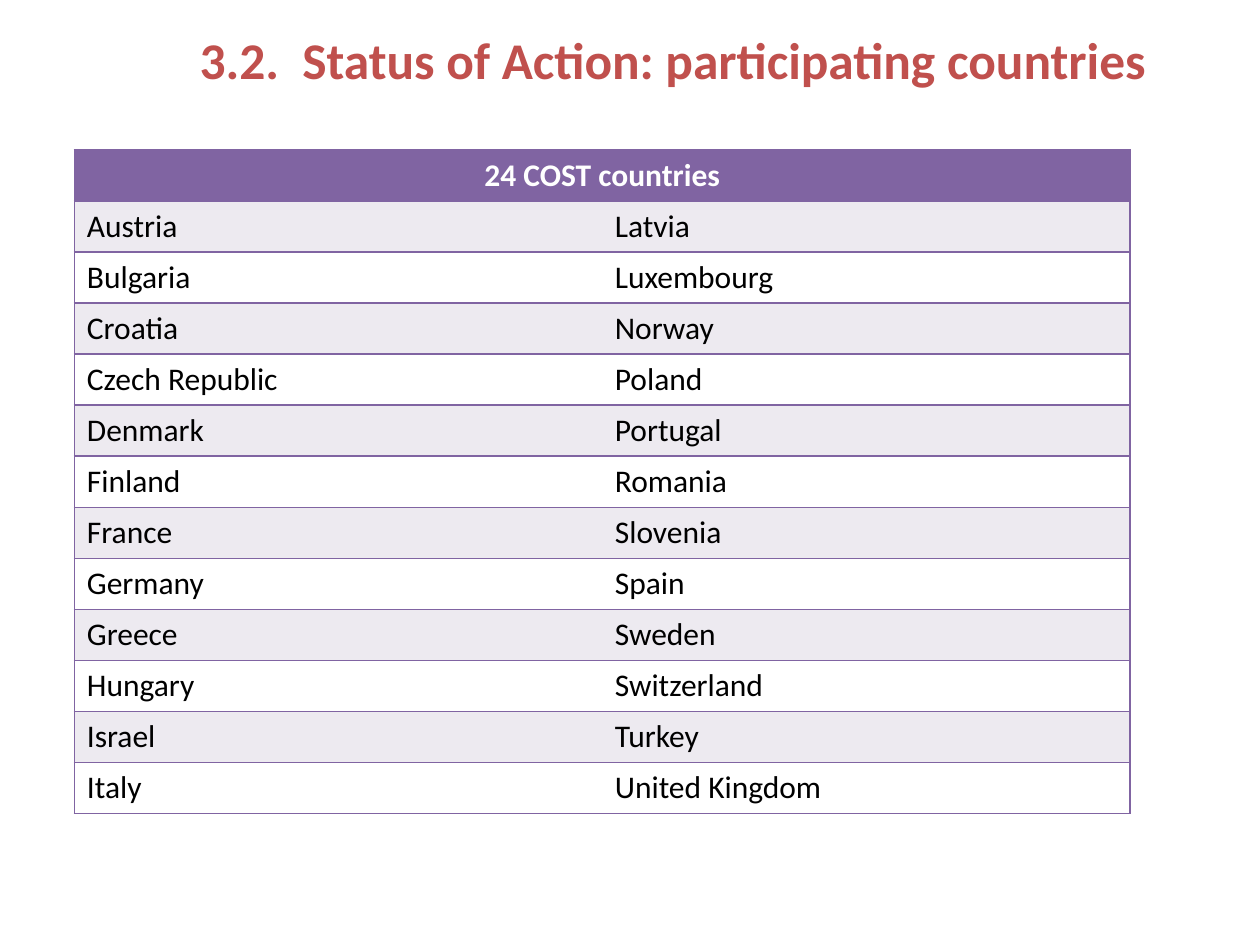
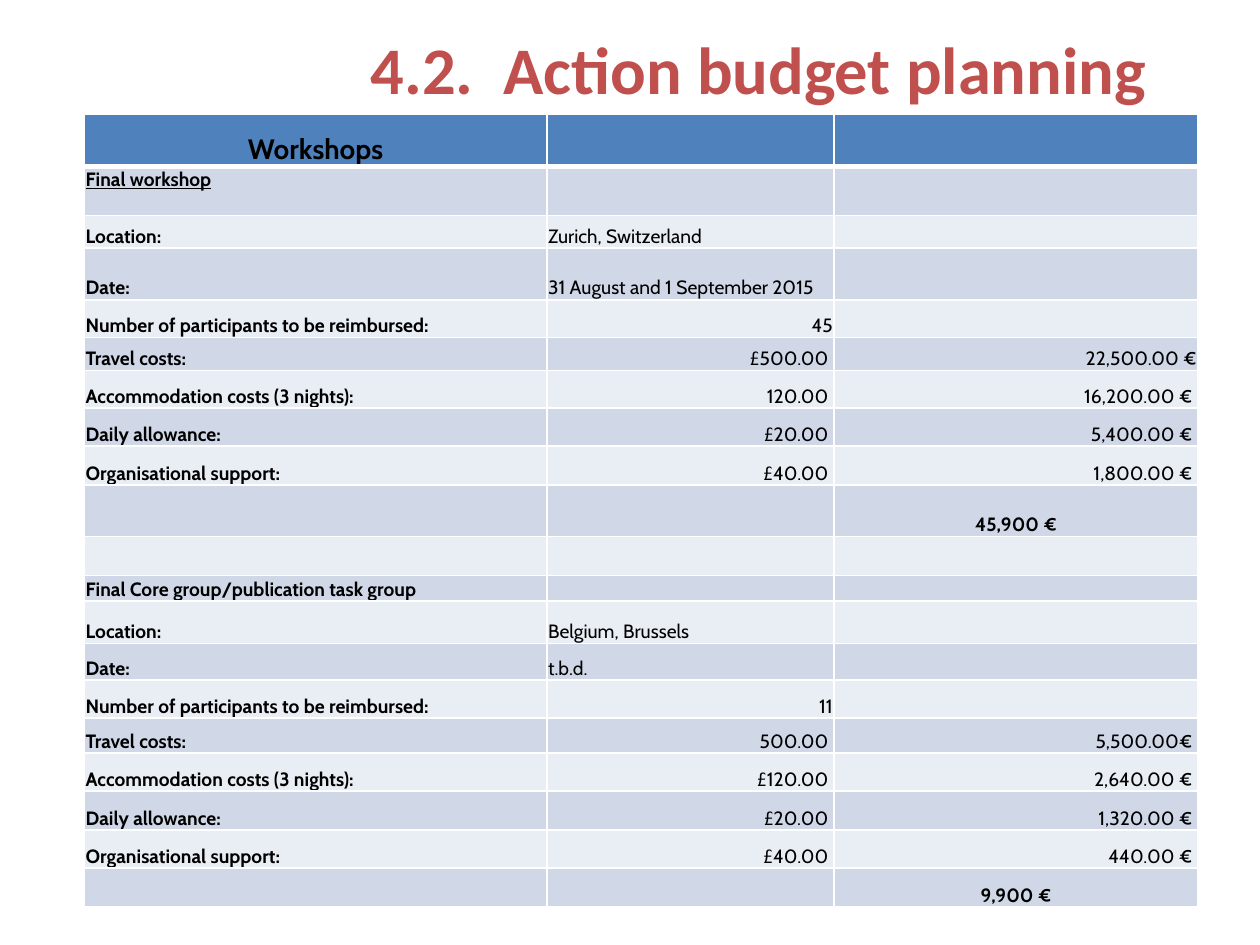
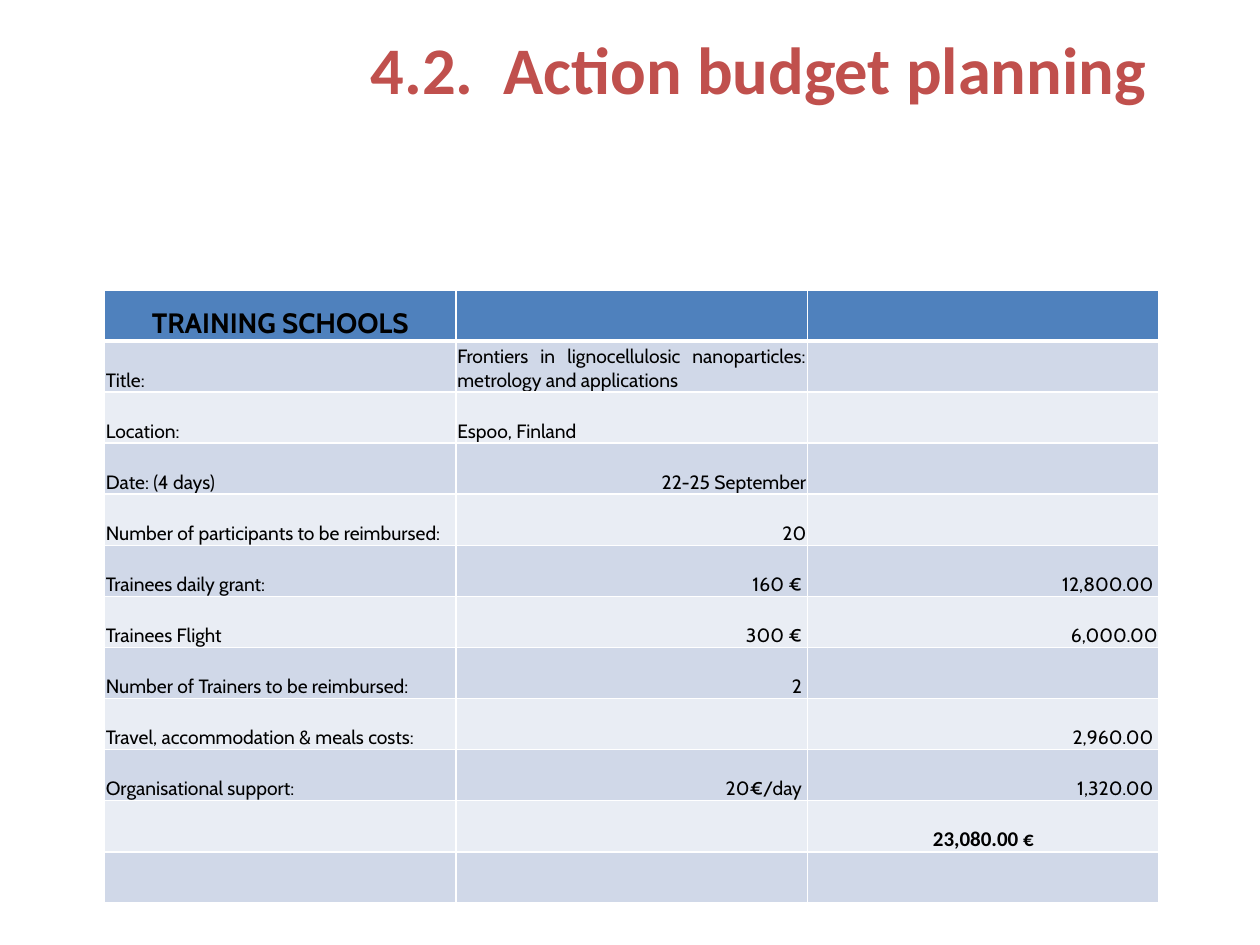
from lxml import etree
from pptx import Presentation
from pptx.dml.color import RGBColor
from pptx.enum import text
from pptx.oxml import ns
from pptx.util import Inches, Pt

# Content
COUNTRIES_TITLE = "3.2.  Status of Action: participating countries"
BUDGET_TITLE = "4.2.  Action budget planning"

COUNTRIES_HEADING = "24 COST countries"
COUNTRIES = [
    ("Austria", "Latvia"),
    ("Bulgaria", "Luxembourg"),
    ("Croatia", "Norway"),
    ("Czech Republic", "Poland"),
    ("Denmark", "Portugal"),
    ("Finland", "Romania"),
    ("France", "Slovenia"),
    ("Germany", "Spain"),
    ("Greece", "Sweden"),
    ("Hungary", "Switzerland"),
    ("Israel", "Turkey"),
    ("Italy", "United Kingdom"),
]

# Budget rows: kind, height, label, value, amount
WORKSHOPS = [
    ("heading", 0.41, "Workshops", "", ""),
    ("section", 0.39, "Final workshop", "", ""),
    ("words", 0.26, "Location:", "Zurich, Switzerland", ""),
    ("words", 0.41, "Date:", "31 August and 1 September 2015", ""),
    ("figures", 0.3, "Number of participants to be reimbursed:", "45", ""),
    ("figures", 0.26, "Travel costs:", "£500.00 ", "22,500.00 €"),
    ("figures", 0.3, "Accommodation costs (3 nights):", "120.00 ", "16,200.00 € "),
    ("figures", 0.3, "Daily allowance:", "£20.00 ", "5,400.00 € "),
    ("figures", 0.31, "Organisational support:", "£40.00 ", "1,800.00 € "),
    ("total", 0.41, "", "", "45,900 €"),
    ("words", 0.31, "", "", ""),
    ("words", 0.2, "Final Core group/publication task group", "", ""),
    ("words", 0.34, "Location:", "Belgium, Brussels", ""),
    ("words", 0.29, "Date:", "t.b.d.", ""),
    ("figures", 0.3, "Number of participants to be reimbursed:", "11", ""),
    ("figures", 0.28, "Travel costs:", "500.00 ", "5,500.00€ "),
    ("figures", 0.3, "Accommodation costs (3 nights):", "£120.00 ", "2,640.00 € "),
    ("figures", 0.31, "Daily allowance:", "£20.00 ", "1,320.00 € "),
    ("figures", 0.3, "Organisational support:", "£40.00 ", "440.00 € "),
    ("total", 0.31, "", "", "9,900 €"),
]

ROW_H = 4.87 / 12
SCHOOLS = [
    ("heading", ROW_H, "TRAINING SCHOOLS", "", ""),
    ("justified", ROW_H, "Title:",
     "Frontiers in lignocellulosic nanoparticles: metrology and applications", ""),
    ("words", ROW_H, "Location:", "Espoo, Finland", ""),
    ("figures", ROW_H, "Date: (4 days)", "22-25 September", ""),
    ("figures", ROW_H, "Number of participants to be reimbursed:", "20", ""),
    ("figures", ROW_H, "Trainees daily grant:", "160 € ", "12,800.00 "),
    ("figures", ROW_H, "Trainees Flight", "300 € ", "6,000.00"),
    ("figures", ROW_H, "Number of Trainers to be reimbursed:", "2 ", ""),
    ("figures", ROW_H, "Travel, accommodation & meals costs:", "", "2,960.00 "),
    ("figures", ROW_H, "Organisational support:", "20€/day ", "1,320.00 "),
    ("total", ROW_H, "", "", "23,080.00 €"),
    ("words", ROW_H, "", "", ""),
]

# Shared style
RED = RGBColor(0xC0, 0x50, 0x4D)
PURPLE = RGBColor(0x80, 0x64, 0xA2)
PALE_PURPLE = RGBColor(0xED, 0xEA, 0xF0)
BLUE = RGBColor(0x4F, 0x81, 0xBD)
MID_BLUE = RGBColor(0xD0, 0xD8, 0xE8)
PALE_BLUE = RGBColor(0xE9, 0xED, 0xF4)
WHITE = RGBColor(0xFF, 0xFF, 0xFF)
BLACK = RGBColor(0, 0, 0)
TITLE_FONT, BUDGET_FONT = "Calibri", "Cabin"
TITLE_RIGHT = 9.2
ALIGN = text.PP_ALIGN
VALUE_ALIGN = {"figures": ALIGN.RIGHT, "justified": ALIGN.JUSTIFY, "total": ALIGN.CENTER}


def write(paragraph, words, font, size, color, bold=False, align=ALIGN.LEFT):
    paragraph.alignment = align
    run = paragraph.add_run()
    run.text = words
    run.font.name, run.font.size, run.font.bold = font, Pt(size), bold
    run.font.color.rgb = color
    return run


def add_title(slide, words, size, width):
    title = slide.shapes.add_textbox(
        Inches(TITLE_RIGHT - width), Inches(0.17), Inches(width), Inches(0.74))
    title.text_frame.word_wrap = True
    write(title.text_frame.paragraphs[0], words, TITLE_FONT, size, RED, True, ALIGN.RIGHT)


def add_grid(slide, left, top, widths, heights):
    grid = slide.shapes.add_table(
        len(heights), len(widths), Inches(left), Inches(top),
        Inches(sum(widths)), Inches(sum(heights))).table
    grid.first_row = grid.horz_banding = False
    for column, width in zip(grid.columns, widths):
        column.width = Inches(width)
    for row, height in zip(grid.rows, heights):
        row.height = Inches(height)
    return grid


def paint(cell, fill, border, **line_widths):
    """Fill a cell and draw its sides (L, R, T, B); a width of 0 means no line."""
    cell.fill.solid()
    cell.fill.fore_color.rgb = fill
    properties = cell._tc.get_or_add_tcPr()
    for place, side in enumerate("LRTB"):
        width = line_widths.get(side, 1)
        line = etree.Element(ns.qn(f"a:ln{side}"), w=str(Pt(width)))
        if width:
            solid = etree.SubElement(line, ns.qn("a:solidFill"))
            etree.SubElement(solid, ns.qn("a:srgbClr"), val=str(border))
        else:
            etree.SubElement(line, ns.qn("a:noFill"))
        properties.insert(place, line)


def add_countries(slide):
    rows = [(COUNTRIES_HEADING, "")] + COUNTRIES
    grid = add_grid(slide, 0.59, 1.19, [4.19] * 2, [5.27 / len(rows)] * len(rows))
    grid.cell(0, 0).merge(grid.cell(0, 1))
    for r, row in enumerate(rows):
        fill = PURPLE if r == 0 else PALE_PURPLE if r % 2 else WHITE
        for c, country in enumerate(row):
            cell = grid.cell(r, c)
            inner = {} if r == 0 else {"L": 0} if c else {"R": 0}
            paint(cell, fill, PURPLE, **inner)
            if country:
                write(cell.text_frame.paragraphs[0], country, TITLE_FONT, 18,
                      BLACK if r else WHITE, r == 0, ALIGN.LEFT if r else ALIGN.CENTER)


def add_budget(slide, left, top, widths, rows, bold_labels, total_font, total_size):
    grid = add_grid(slide, left, top, widths, [row[1] for row in rows])
    for r, (kind, _, *entries) in enumerate(rows):
        heading, total = kind == "heading", kind == "total"
        fill = BLUE if heading else MID_BLUE if r % 2 else PALE_BLUE
        sides = {"B": 3} if heading else {"T": 3} if r == 1 else {}
        font, size = (total_font, total_size) if total else (BUDGET_FONT, 16 if heading else 11)
        for c, entry in enumerate(entries):
            cell = grid.cell(r, c)
            cell.margin_left = cell.margin_right = cell.margin_top = Inches(0.01)
            cell.margin_bottom = 0
            cell.vertical_anchor = (
                text.MSO_ANCHOR.TOP if kind == "section" else text.MSO_ANCHOR.BOTTOM)
            paint(cell, fill, WHITE, **sides)
            paragraph = cell.text_frame.paragraphs[0]
            if not entry:
                # Keeps an empty cell from stretching its row
                etree.SubElement(paragraph._p, ns.qn("a:endParaRPr"), sz="1100")
                continue
            align = VALUE_ALIGN.get(kind, ALIGN.LEFT) if c else ALIGN.LEFT
            bold = heading or total or (c == 0 and bold_labels)
            run = write(paragraph, entry, font, size, BLACK, bold,
                        ALIGN.CENTER if heading else align)
            if kind == "section":
                run.font.underline = True


def main():
    deck = Presentation()
    deck.slide_width, deck.slide_height = Inches(10), Inches(7.5)
    countries, workshops, schools = (
        deck.slides.add_slide(deck.slide_layouts[6]) for _ in range(3))

    # Participating countries
    add_title(countries, COUNTRIES_TITLE, 29.4, 7.74)
    add_countries(countries)

    # Workshop budget
    add_title(workshops, BUDGET_TITLE, 38, 7.37)
    add_budget(workshops, 0.67, 0.91, [3.67, 2.28, 2.89], WORKSHOPS, True, BUDGET_FONT, 11)

    # Training school budget
    add_budget(schools, 0.83, 2.3, [2.79] * 3, SCHOOLS, False, TITLE_FONT, 12)
    add_title(schools, BUDGET_TITLE, 38, 7.37)

    deck.save("out.pptx")


if __name__ == "__main__":
    main()
